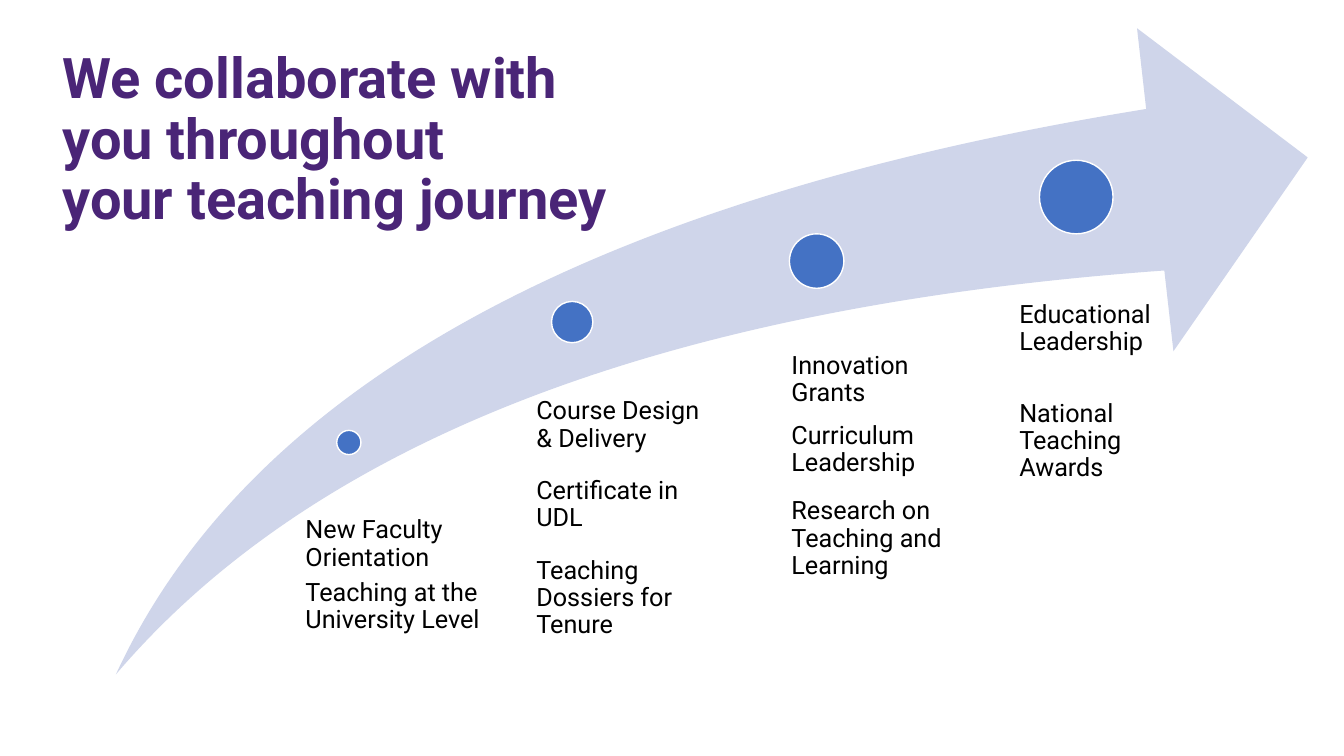
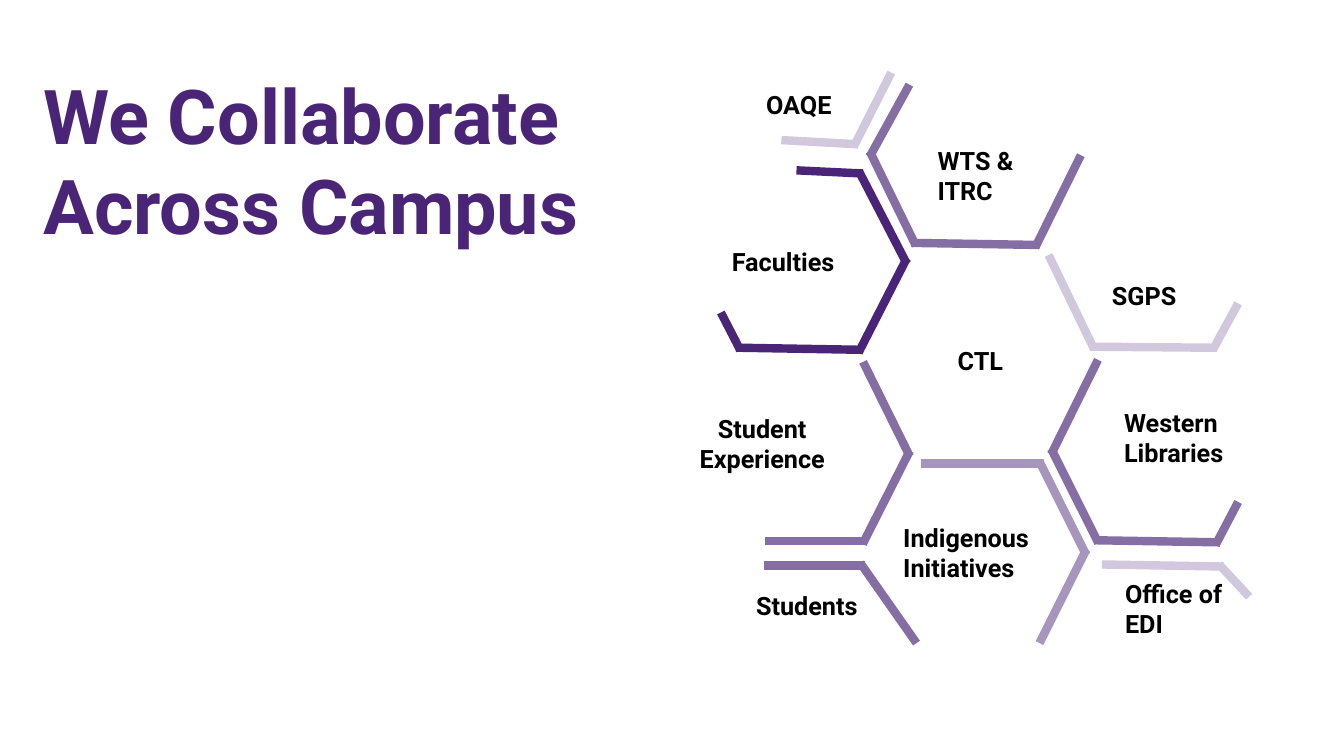
import itertools
import math

import pptx
import pptx.dml.color
import pptx.enum.shapes
import pptx.enum.text
import pptx.oxml.ns
import pptx.util
from lxml import etree

Inches = pptx.util.Inches
Pt = pptx.util.Pt
ALIGN = pptx.enum.text.PP_ALIGN
SHAPES = pptx.enum.shapes.MSO_SHAPE

FONT = "Roboto"
COLORS = {
    "purple": "4A2577",
    "violet": "856EA4",
    "lilac": "A695BD",
    "mist": "D1C8DD",
    "swoosh": "CFD5EA",
    "dot": "4472C4",
    "white": "FFFFFF",
    "black": "000000",
}
JOINT = 0.03

STAGES = [
    ((2.19, 3.99, 0.24), (1.88, 4.85, 1.89, 1.53),
     [("New Faculty Orientation", 6), ("Teaching at the University Level", 0)]),
    ((4.32, 2.71, 0.41), (4.17, 3.67, 1.74, 2.4),
     [("Course Design & Delivery", 18), ("Certificate in UDL", 18),
      ("Teaching Dossiers for Tenure", 0)]),
    ((6.68, 2.04, 0.54), (6.7, 3.22, 1.86, 2.3),
     [("Innovation", 0), ("Grants", 11), ("Curriculum Leadership", 15),
      ("Research on Teaching and Learning", 0)]),
    ((9.16, 1.31, 0.73), (8.96, 2.71, 2.07, 2.25),
     [("Educational Leadership", 32), ("National\vTeaching\vAwards", 0)]),
]

PARTNER_OUTLINES = [
    ("violet", [(2.42, 0.24), (2.04, 0.93), (2.47, 1.81), (3.68, 1.83), (4.12, 0.94)]),
    ("purple", [(1.3, 1.09), (1.93, 1.12), (2.38, 1.99), (1.93, 2.87), (0.73, 2.85),
                (0.55, 2.5)]),
    ("mist", [(3.8, 1.93), (4.24, 2.84), (5.44, 2.85), (5.68, 2.41)]),
    ("violet", [(1.96, 2.99), (2.41, 3.9), (1.97, 4.77), (0.99, 4.77)]),
    ("violet", [(4.29, 2.97), (3.84, 3.88), (4.28, 4.76), (5.47, 4.78), (5.68, 4.38)]),
    ("lilac", [(2.53, 4), (3.72, 4), (4.16, 4.88), (3.71, 5.78)]),
    ("violet", [(0.98, 5.01), (1.95, 5.01), (2.49, 5.78)]),
    ("mist", [(4.33, 5), (5.51, 5.02), (5.79, 5.32)]),
    ("mist", [(1.15, 0.79), (1.88, 0.83), (2.24, 0.12)]),
]

PARTNER_LABELS = [
    (["CTL"], (2.8, 2.78, 0.74, 0.45), ALIGN.LEFT),
    (["SGPS"], (4.33, 2.13, 0.96, 0.45), ALIGN.LEFT),
    (["WTS &", "ITRC"], (2.6, 0.79, 1.08, 0.71), ALIGN.LEFT),
    (["Faculties"], (0.56, 1.79, 1.43, 0.45), ALIGN.LEFT),
    (["Western", "Libraries"], (4.45, 3.39, 1.35, 0.71), ALIGN.LEFT),
    (["Student", "Experience"], (0.07, 3.45, 1.78, 0.79), ALIGN.CENTER),
    (["Indigenous", "Initiatives"], (2.26, 4.53, 1.65, 0.71), ALIGN.LEFT),
    (["Students"], (0.8, 5.21, 1.28, 0.4), ALIGN.LEFT),
    (["OAQE"], (0.9, 0.24, 1.25, 0.4), ALIGN.LEFT),
    (["Office of EDI"], (4.46, 5.09, 1.25, 0.71), ALIGN.LEFT),
]


def rgb(name):
    return pptx.dml.color.RGBColor.from_string(COLORS[name])


def add_text(slide, box, entries, size=18, color="black", bold=False,
             align=ALIGN.LEFT, spacing=1.0, inset=None):
    frame = slide.shapes.add_textbox(*map(Inches, box)).text_frame
    frame.word_wrap = True
    if inset is not None:
        frame.margin_left = frame.margin_right = Inches(inset)
        frame.margin_top = frame.margin_bottom = Inches(inset)
    for index, (wording, after) in enumerate(entries):
        paragraph = frame.paragraphs[0] if index == 0 else frame.add_paragraph()
        paragraph.text = wording
        paragraph.alignment = align
        paragraph.line_spacing = spacing
        paragraph.space_after = Pt(after)
        paragraph.font.name = FONT
        paragraph.font.size = Pt(size)
        paragraph.font.bold = bold
        paragraph.font.color.rgb = rgb(color)


def add_title(slide, box, wording, size, spacing=1.0):
    add_text(slide, box, [(wording, 0)], size, "purple", True, spacing=spacing)


def add_filled(slide, kind, box, fill, outline=None):
    shape = slide.shapes.add_shape(kind, *map(Inches, box))
    shape.shadow.inherit = False
    shape.fill.solid()
    shape.fill.fore_color.rgb = rgb(fill)
    if outline:
        shape.line.color.rgb = rgb(outline)
        shape.line.width = Pt(1)
    else:
        shape.line.fill.background()
    return shape


def add_outline(slide, color, points):
    last = len(points) - 2
    for index, (start, end) in enumerate(itertools.pairwise(points)):
        length = math.dist(start, end)
        step_x = (end[0] - start[0]) / length * JOINT
        step_y = (end[1] - start[1]) / length * JOINT
        before, after = int(index > 0), int(index < last)
        edge = slide.shapes.add_connector(
            pptx.enum.shapes.MSO_CONNECTOR.STRAIGHT,
            Inches(start[0] - before * step_x), Inches(start[1] - before * step_y),
            Inches(end[0] + after * step_x), Inches(end[1] + after * step_y))
        edge.line.color.rgb = rgb(color)
        edge.line.width = Pt(6)
        etree.SubElement(edge._element.spPr, pptx.oxml.ns.qn("a:effectLst"))


def add_journey(slide, left, top, width, height):
    swoosh = add_filled(slide, SHAPES.SWOOSH_ARROW, (left, top, width, height), "swoosh")
    swoosh.adjustments[0] = 0.25
    swoosh.adjustments[1] = 0.25
    for (dot_x, dot_y, size), (x, y, w, h), offerings in STAGES:
        add_filled(slide, SHAPES.OVAL, (left + dot_x, top + dot_y, size, size),
                   "dot", "white")
        add_text(slide, (left + x, top + y, w, h), offerings, spacing=0.9, inset=0)


def add_honeycomb(slide, left, top):
    for color, points in PARTNER_OUTLINES:
        add_outline(slide, color, [(left + x, top + y) for x, y in points])
    for lines, (x, y, w, h), align in PARTNER_LABELS:
        add_text(slide, (left + x, top + y, w, h), [(line, 0) for line in lines],
                 bold=True, align=align)


def build_journey_slide(slide):
    add_title(slide, (0.52, 0.45, 5.75, 2.54),
              "We collaborate with you throughout your\u00a0teaching journey".replace("\u00a0", chr(160)),
              40, 0.9)
    add_journey(slide, 1.15, 0.28, 11.82, 6.41)


def build_campus_slide(slide):
    add_title(slide, (0.33, 0.63, 5.89, 1.92), "We Collaborate Across Campus", 54)
    add_honeycomb(slide, 6.6, 0.6)


def main():
    deck = pptx.Presentation()
    deck.slide_width = Inches(13.33)
    deck.slide_height = Inches(7.5)
    for build in (build_journey_slide, build_campus_slide):
        build(deck.slides.add_slide(deck.slide_layouts[6]))
    deck.save("out.pptx")


if __name__ == "__main__":
    main()
